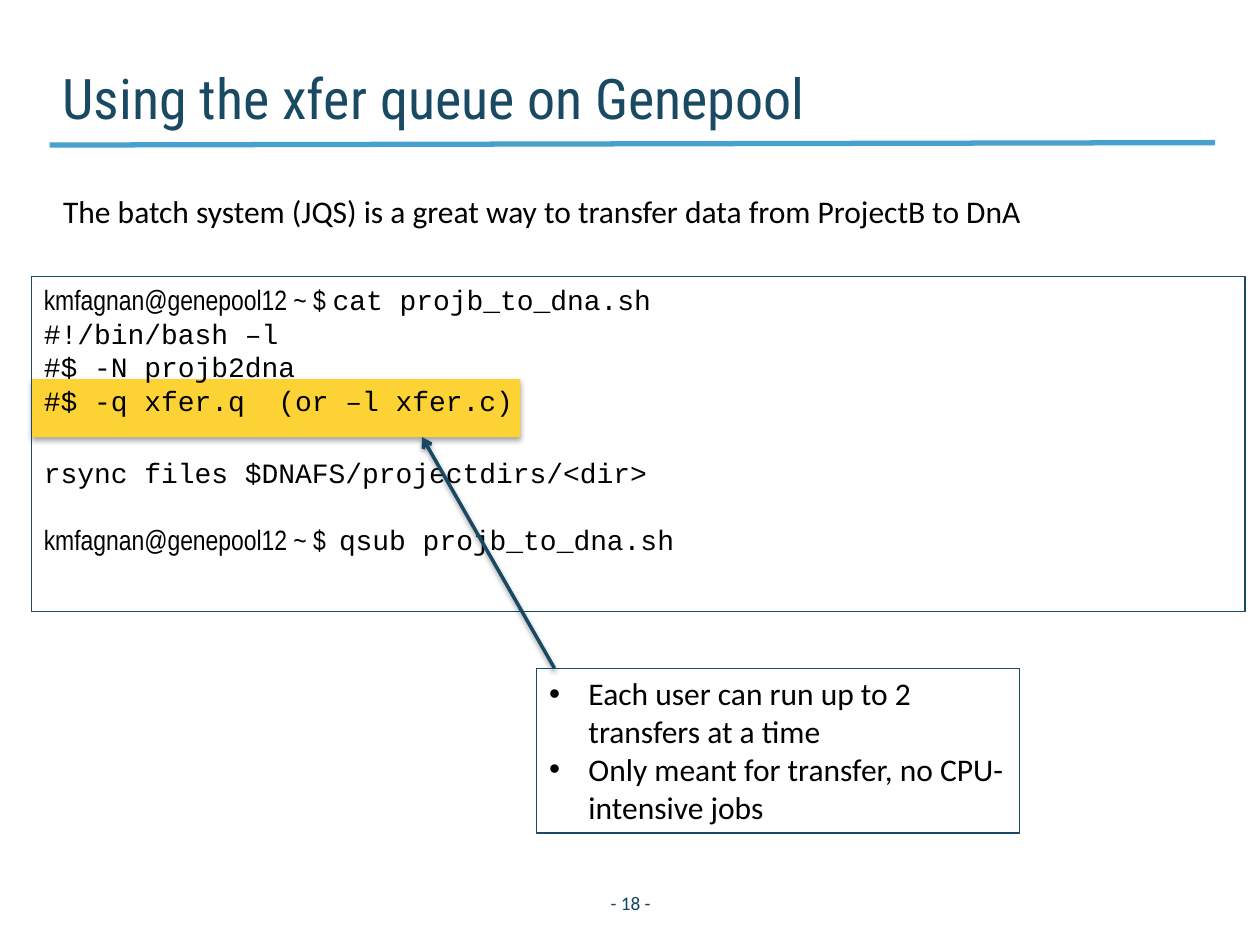
from dataclasses import dataclass

from lxml import etree
from pptx import Presentation
from pptx.dml.color import RGBColor as RGB
from pptx.enum.shapes import MSO_CONNECTOR as Connector
from pptx.enum.shapes import MSO_SHAPE as Shape
from pptx.enum.text import MSO_ANCHOR as Anchor
from pptx.enum.text import MSO_AUTO_SIZE as AutoSize
from pptx.enum.text import PP_ALIGN as Align
from pptx.oxml.ns import qn
from pptx.util import Pt


@dataclass(frozen=True)
class Theme:
    """Colours, fonts and type sizes of the slide."""
    navy: RGB = RGB(0x19, 0x49, 0x63)
    number: RGB = RGB(0x11, 0x47, 0x66)
    blue: RGB = RGB(0x46, 0xA0, 0xD0)
    yellow: RGB = RGB(0xFC, 0xD2, 0x35)
    black: RGB = RGB(0, 0, 0)
    heading_font: str = "Roboto Condensed"
    body_font: str = "Calibri"
    prompt_font: str = "Arial Narrow"
    code_font: str = "Courier New"
    title_size: Pt = Pt(32)
    body_size: Pt = Pt(18)
    code_size: Pt = Pt(16)
    number_size: Pt = Pt(11)


THEME = Theme()
CODE_PITCH = Pt(19.2)
PROMPT = "kmfagnan@genepool12 ~ $ "
CODE_LINES = [
    (0, PROMPT, "cat projb_to_dna.sh"),
    (0, "", "#!/bin/bash –l"),
    (0, "", "#$ -N projb2dna"),
    (0, "", "#$ -q xfer.q  (or –l xfer.c)"),
    (22, "", "rsync files $DNAFS/projectdirs/<dir>"),
    (19, PROMPT + " ", "qsub projb_to_dna.sh"),
]
LIMITS = [
    "Each user can run up to 2 transfers at a time",
    "Only meant for transfer, no CPU-intensive jobs",
]


def apply_format(target, values):
    """Set each named attribute of the target."""
    for name, value in values.items():
        setattr(target, name, value)


def add_run(paragraph, text, font, size, color):
    """Append a formatted run to the paragraph."""
    run = paragraph.add_run()
    run.text = text
    apply_format(run.font, {"name": font, "size": size})
    run.font.color.rgb = color


def paragraphs_for(frame, items):
    """Pair each item with its own paragraph of the frame."""
    for index, item in enumerate(items):
        paragraph = frame.add_paragraph() if index else frame.paragraphs[0]
        yield paragraph, item


def set_shadow(properties, alpha=None):
    """Give shape properties a soft drop shadow, or none without alpha."""
    effects = etree.SubElement(properties, qn("a:effectLst"))
    if alpha:
        shadow = etree.SubElement(
            effects, qn("a:outerShdw"), blurRad=str(Pt(3.1)), dist=str(Pt(1.8)),
            dir="5400000", rotWithShape="0")
        color = etree.SubElement(shadow, qn("a:srgbClr"), val=str(THEME.black))
        etree.SubElement(color, qn("a:alpha"), val=str(alpha * 1000))


def add_line(slide, start, end, color, width, shadow=None):
    """Draw a straight line between two points."""
    line = slide.shapes.add_connector(Connector.STRAIGHT, *map(Pt, start + end))
    line.line.color.rgb = color
    line.line.width = Pt(width)
    set_shadow(line._element.spPr, shadow)
    return line


def add_frame(slide, box):
    """Add an outlined rectangle and return its text frame."""
    shape = slide.shapes.add_shape(Shape.RECTANGLE, *map(Pt, box))
    shape.shadow.inherit = False
    shape.fill.background()
    shape.line.color.rgb = THEME.navy
    shape.line.width = Pt(0.75)
    apply_format(shape.text_frame,
                 {"word_wrap": True, "vertical_anchor": Anchor.TOP})
    return shape.text_frame


def add_title(slide, box, text):
    """Place the title and the rule beneath it."""
    title = slide.shapes.title
    apply_format(title, dict(zip(("left", "top", "width", "height"), map(Pt, box))))
    apply_format(title.text_frame, {
        "word_wrap": True, "auto_size": AutoSize.NONE,
        "vertical_anchor": Anchor.BOTTOM, "margin_top": 0, "margin_bottom": 0})
    paragraph = title.text_frame.paragraphs[0]
    paragraph.alignment = Align.LEFT
    add_run(paragraph, text, THEME.heading_font, THEME.title_size, THEME.navy)
    left, top, _, height = box
    rule = top + height + 8
    add_line(slide, (left, rule), (left + 666, rule - 1.4), THEME.blue, 3)


def add_label(slide, box, text, size, color, alignment, anchor):
    """Place one paragraph of body text."""
    frame = slide.shapes.add_textbox(*map(Pt, box)).text_frame
    apply_format(frame, {"word_wrap": True, "vertical_anchor": anchor})
    paragraph = frame.paragraphs[0]
    paragraph.alignment = alignment
    add_run(paragraph, text, THEME.body_font, size, color)


def add_highlight(slide, box):
    """Place the yellow band behind the queue option."""
    band = slide.shapes.add_shape(Shape.RECTANGLE, *map(Pt, box))
    band.fill.solid()
    band.fill.fore_color.rgb = THEME.yellow
    band.line.fill.background()
    set_shadow(band._element.spPr, 35)


def add_terminal(slide, box):
    """Place the shell session."""
    frame = add_frame(slide, box)
    for paragraph, (gap, prompt, code) in paragraphs_for(frame, CODE_LINES):
        apply_format(paragraph, {"alignment": Align.LEFT, "space_before": Pt(gap),
                                 "line_spacing": CODE_PITCH})
        for text, font in ((prompt, THEME.prompt_font), (code, THEME.code_font)):
            if text:
                add_run(paragraph, text, font, THEME.code_size, THEME.black)


def add_limits(slide, box):
    """Place the bulleted note on queue limits."""
    for paragraph, text in paragraphs_for(add_frame(slide, box), LIMITS):
        paragraph.alignment = Align.LEFT
        properties = paragraph._p.get_or_add_pPr()
        properties.set("marL", str(Pt(22.5)))
        properties.set("indent", str(-Pt(22.5)))
        etree.SubElement(properties, qn("a:buFont"), typeface="Arial")
        etree.SubElement(properties, qn("a:buChar"), char="•")
        add_run(paragraph, text, THEME.body_font, THEME.body_size, THEME.black)


def add_pointer(slide, start, end):
    """Draw the arrow from the note to the highlighted option."""
    arrow = add_line(slide, start, end, THEME.navy, 2, 38)
    etree.SubElement(arrow.line._get_or_add_ln(), qn("a:tailEnd"), type="arrow")


def main():
    """Build and save the slide."""
    presentation = Presentation()
    apply_format(presentation, {"slide_width": Pt(720), "slide_height": Pt(540)})
    slide = presentation.slides.add_slide(presentation.slide_layouts[5])
    add_highlight(slide, (18, 216.7, 279.4, 33.1))
    add_title(slide, (28.4, 14.4, 554.4, 60.5), "Using the xfer queue on Genepool")
    add_label(slide, (324, 501.8, 72.7, 28.8), "- 18 -", THEME.number_size,
              THEME.number, Align.CENTER, Anchor.MIDDLE)
    add_terminal(slide, (18, 157.9, 693.4, 191.5))
    add_label(slide, (29, 106.2, 590.4, 28.8),
              "The batch system (JQS) is a great way to transfer data from ProjectB to DnA",
              THEME.body_size, THEME.black, Align.LEFT, Anchor.TOP)
    add_pointer(slide, (316.8, 381.8), (241.2, 249.8))
    add_limits(slide, (306.7, 381.8, 275.8, 94.3))
    presentation.save("out.pptx")


if __name__ == "__main__":
    main()
